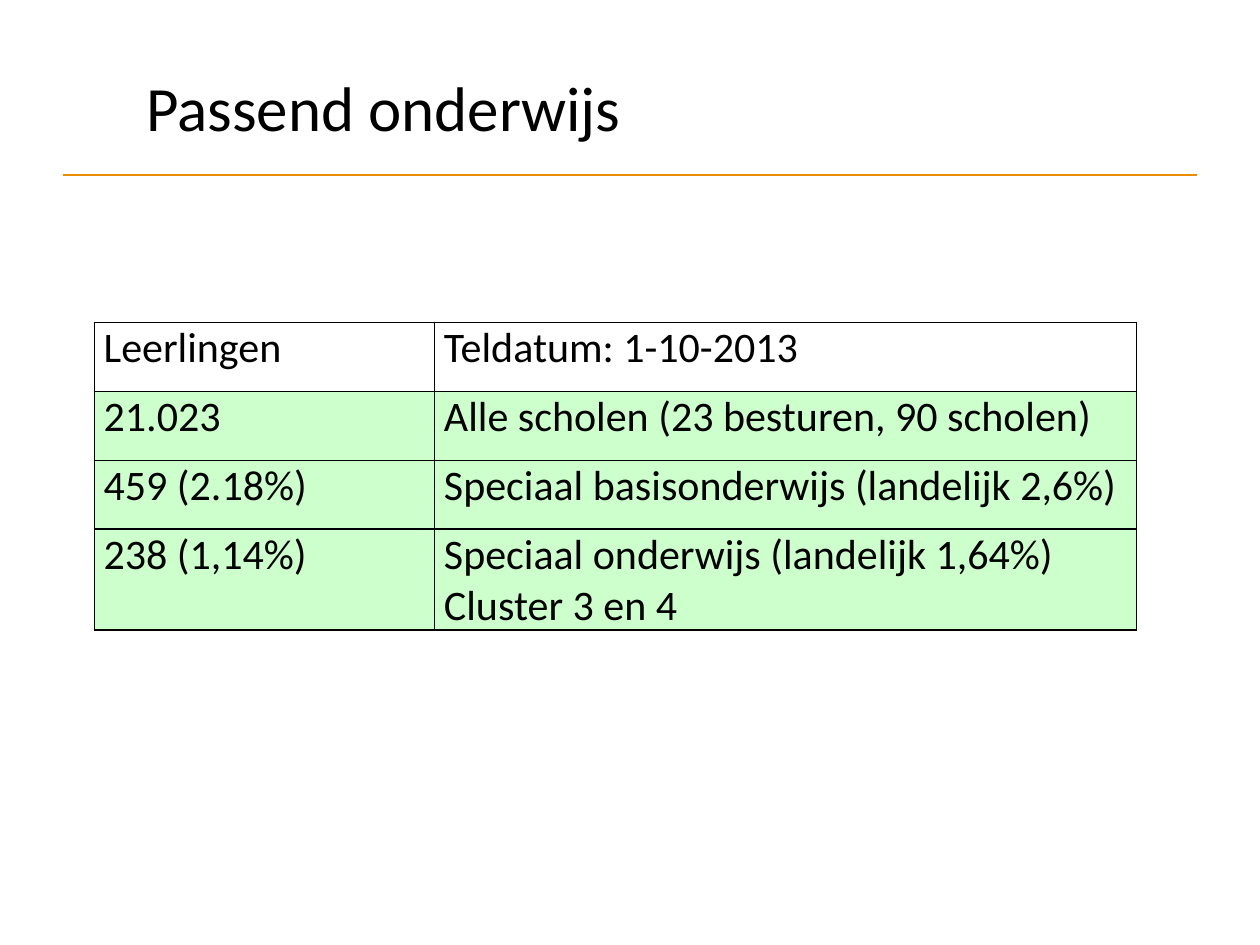
from lxml import etree
from pptx import Presentation
from pptx.dml.color import RGBColor
from pptx.enum.shapes import MSO_CONNECTOR
from pptx.enum.text import MSO_ANCHOR
from pptx.oxml.ns import qn
from pptx.util import Cm, Pt

STRAIGHT = MSO_CONNECTOR.STRAIGHT
MIDDLE = MSO_ANCHOR.MIDDLE
TOP = MSO_ANCHOR.TOP

BLACK = RGBColor(0x00, 0x00, 0x00)
WHITE = RGBColor(0xFF, 0xFF, 0xFF)
MINT = RGBColor(0xCC, 0xFF, 0xCC)
ORANGE = RGBColor(0xEB, 0x8D, 0x03)
FONT = "Calibri"

COLUMN_WIDTHS = (6.86, 14.15)
ROW_HEIGHT = 1.39
PUPIL_ROWS = [
    ("Leerlingen", "Teldatum: 1-10-2013"),
    ("21.023", "Alle scholen (23 besturen, 90 scholen)"),
    ("459 (2.18%)", "Speciaal basisonderwijs (landelijk 2,6%)"),
    ("238 (1,14%)", "Speciaal onderwijs (landelijk 1,64%)\nCluster 3 en 4"),
]


def write(para, text, size):
    """Add text to a paragraph, with a line break at each newline."""
    for number, line in enumerate(text.split("\n")):
        if number:
            para.add_line_break()
        span = para.add_run()
        span.text = line
        span.font.name = FONT
        span.font.size = Pt(size)
        span.font.color.rgb = BLACK


def add_rule(page, left, top, width):
    rule = page.shapes.add_connector(
        STRAIGHT, Cm(left), Cm(top), Cm(left + width), Cm(top))
    rule.line.color.rgb = ORANGE
    rule.line.width = Pt(1)
    etree.SubElement(rule._element.spPr, qn("a:effectLst"))


def add_title(page, left, top, width, height):
    box = page.shapes.add_textbox(Cm(left), Cm(top), Cm(width), Cm(height))
    frame = box.text_frame
    frame.word_wrap = True
    frame.vertical_anchor = MIDDLE
    write(frame.paragraphs[0], "Passend onderwijs", 36)


def add_borders(cell):
    properties = cell._tc.get_or_add_tcPr()
    for position, side in enumerate(("lnL", "lnR", "lnT", "lnB")):
        border = etree.Element(qn(f"a:{side}"), w=str(Pt(1)))
        fill = etree.SubElement(border, qn("a:solidFill"))
        etree.SubElement(fill, qn("a:srgbClr"), val=str(BLACK))
        properties.insert(position, border)


def fill_cell(cell, text, colour):
    cell.fill.solid()
    cell.fill.fore_color.rgb = colour
    cell.margin_left = cell.margin_right = Cm(0.19)
    cell.margin_top = cell.margin_bottom = Cm(0)
    cell.vertical_anchor = TOP
    write(cell.text_frame.paragraphs[0], text, 24)
    add_borders(cell)


def add_pupil_table(page, left, top):
    table = page.shapes.add_table(
        len(PUPIL_ROWS), len(COLUMN_WIDTHS), Cm(left), Cm(top),
        Cm(sum(COLUMN_WIDTHS)), Cm(ROW_HEIGHT * len(PUPIL_ROWS))).table
    for column, width in zip(table.columns, COLUMN_WIDTHS):
        column.width = Cm(width)
    for row_number, texts in enumerate(PUPIL_ROWS):
        table.rows[row_number].height = Cm(ROW_HEIGHT)
        colour = MINT if row_number else WHITE
        for column_number, text in enumerate(texts):
            fill_cell(table.cell(row_number, column_number), text, colour)


def main():
    deck = Presentation()
    deck.slide_width = Cm(25.4)
    deck.slide_height = Cm(19.05)
    page = deck.slides.add_slide(deck.slide_layouts[6])
    add_rule(page, 1.27, 3.53, 22.86)
    add_title(page, 2.7, 0.56, 14.8, 3.18)
    add_pupil_table(page, 1.9, 6.5)
    deck.save("out.pptx")


if __name__ == "__main__":
    main()
